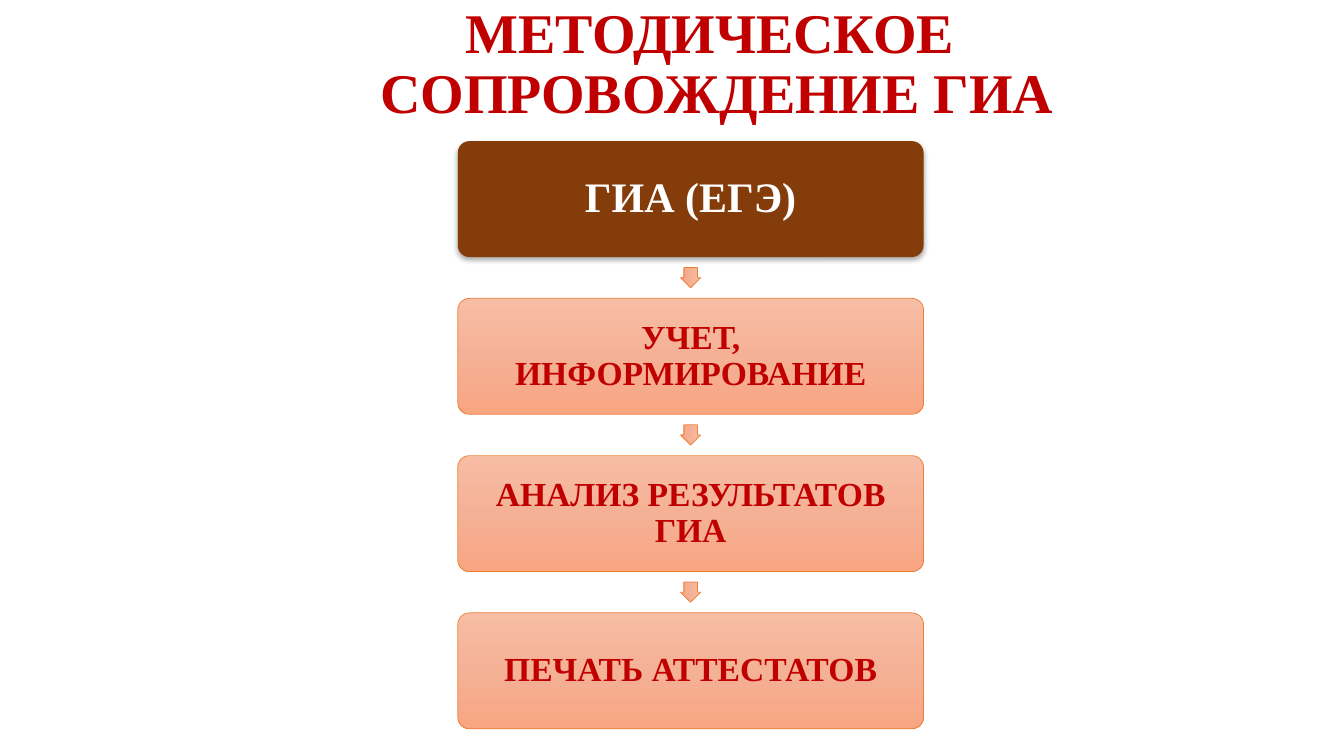
"""Build the slide on methodical support of the state final exams: a title and a four-step flow."""
from copy import deepcopy

from lxml import etree
from pptx import Presentation
from pptx.dml.color import RGBColor
from pptx.enum.shapes import MSO_SHAPE
from pptx.enum.text import MSO_ANCHOR, PP_ALIGN
from pptx.oxml.ns import qn
from pptx.util import Inches, Pt

ROUNDED = MSO_SHAPE.ROUNDED_RECTANGLE
ARROW = MSO_SHAPE.RIGHT_ARROW
CENTER = PP_ALIGN.CENTER
MIDDLE = MSO_ANCHOR.MIDDLE
COLORS = {
    "red": "C00000",
    "brown": "843C0B",
    "white": "FFFFFF",
    "outline": "ED7D31",
    "shadow": "000000",
    "peach_top": "F7BDA5",
    "peach_middle": "F5B196",
    "peach_bottom": "F8A582",
}
STEPS = ["ГИА (ЕГЭ)", "УЧЕТ, ИНФОРМИРОВАНИЕ", "АНАЛИЗ РЕЗУЛЬТАТОВ ГИА", "ПЕЧАТЬ АТТЕСТАТОВ"]
STEP_LEFT, STEP_TOP, STEP_WIDTH, STEP_HEIGHT = 4.54, 1.4, 4.62, 1.15
STEP_PITCH = 1.56
ARROW_SIZE = 0.2
ARROW_LEFT = STEP_LEFT + (STEP_WIDTH - ARROW_SIZE) / 2
ARROW_GAP = (STEP_PITCH - STEP_HEIGHT - ARROW_SIZE) / 2


def write(text_frame, text, size, color):
    """Fill a text frame with centred bold paragraphs."""
    text_frame.word_wrap = True
    text_frame.text = text
    for paragraph in text_frame.paragraphs:
        paragraph.alignment = CENTER
        paragraph.line_spacing = 0.9
        for run in paragraph.runs:
            run.font.name = "Times New Roman"
            run.font.size = Pt(size)
            run.font.bold = True
            run.font.color.rgb = RGBColor.from_string(COLORS[color])


def paint_peach(shape):
    """Give a shape the peach gradient and the thin orange outline."""
    shape.fill.gradient()
    shape.fill.gradient_angle = 270
    first_stop = shape._element.spPr.find(".//" + qn("a:gs"))
    first_stop.addnext(deepcopy(first_stop))
    stops = zip(shape.fill.gradient_stops, (0, 0.5, 1), ("peach_top", "peach_middle", "peach_bottom"))
    for stop, position, color in stops:
        stop.position = position
        stop.color.rgb = RGBColor.from_string(COLORS[color])
    shape.line.color.rgb = RGBColor.from_string(COLORS["outline"])
    shape.line.width = Pt(0.5)


prs = Presentation()
prs.slide_width, prs.slide_height = Inches(13.33), Inches(7.5)
slide = prs.slides.add_slide(prs.slide_layouts[6])

for index, label in enumerate(STEPS):
    top = STEP_TOP + index * STEP_PITCH
    step = slide.shapes.add_shape(
        ROUNDED, Inches(STEP_LEFT), Inches(top), Inches(STEP_WIDTH), Inches(STEP_HEIGHT))
    step.adjustments[0] = 0.1
    step.shadow.inherit = False
    frame = step.text_frame
    frame.vertical_anchor = MIDDLE
    frame.margin_left = frame.margin_right = frame.margin_top = frame.margin_bottom = Inches(0.03)

    if index == 0:
        step.fill.solid()
        step.fill.fore_color.rgb = RGBColor.from_string(COLORS["brown"])
        step.line.fill.background()
        effects = step._element.spPr.find(qn("a:effectLst"))
        shadow = etree.SubElement(
            effects, qn("a:outerShdw"), blurRad=str(Pt(3.5)), dist=str(Pt(2.2)),
            dir="5400000", algn="ctr", rotWithShape="0")
        shade = etree.SubElement(shadow, qn("a:srgbClr"), val=COLORS["shadow"])
        etree.SubElement(shade, qn("a:alpha"), val="32000")
        write(frame, label, 30, "white")
    else:
        paint_peach(step)
        write(frame, label, 24, "red")
        arrow = slide.shapes.add_shape(
            ARROW, Inches(ARROW_LEFT), Inches(top - ARROW_GAP - ARROW_SIZE),
            Inches(ARROW_SIZE), Inches(ARROW_SIZE))
        arrow.rotation = 90
        arrow.adjustments[0] = 0.67
        arrow.adjustments[1] = 0.5
        arrow.shadow.inherit = False
        paint_peach(arrow)

title = slide.shapes.add_textbox(Inches(1.11), Inches(0), Inches(12), Inches(1.25))
write(title.text_frame, "МЕТОДИЧЕСКОЕ \nСОПРОВОЖДЕНИЕ ГИА", 40, "red")

prs.save("out.pptx")
